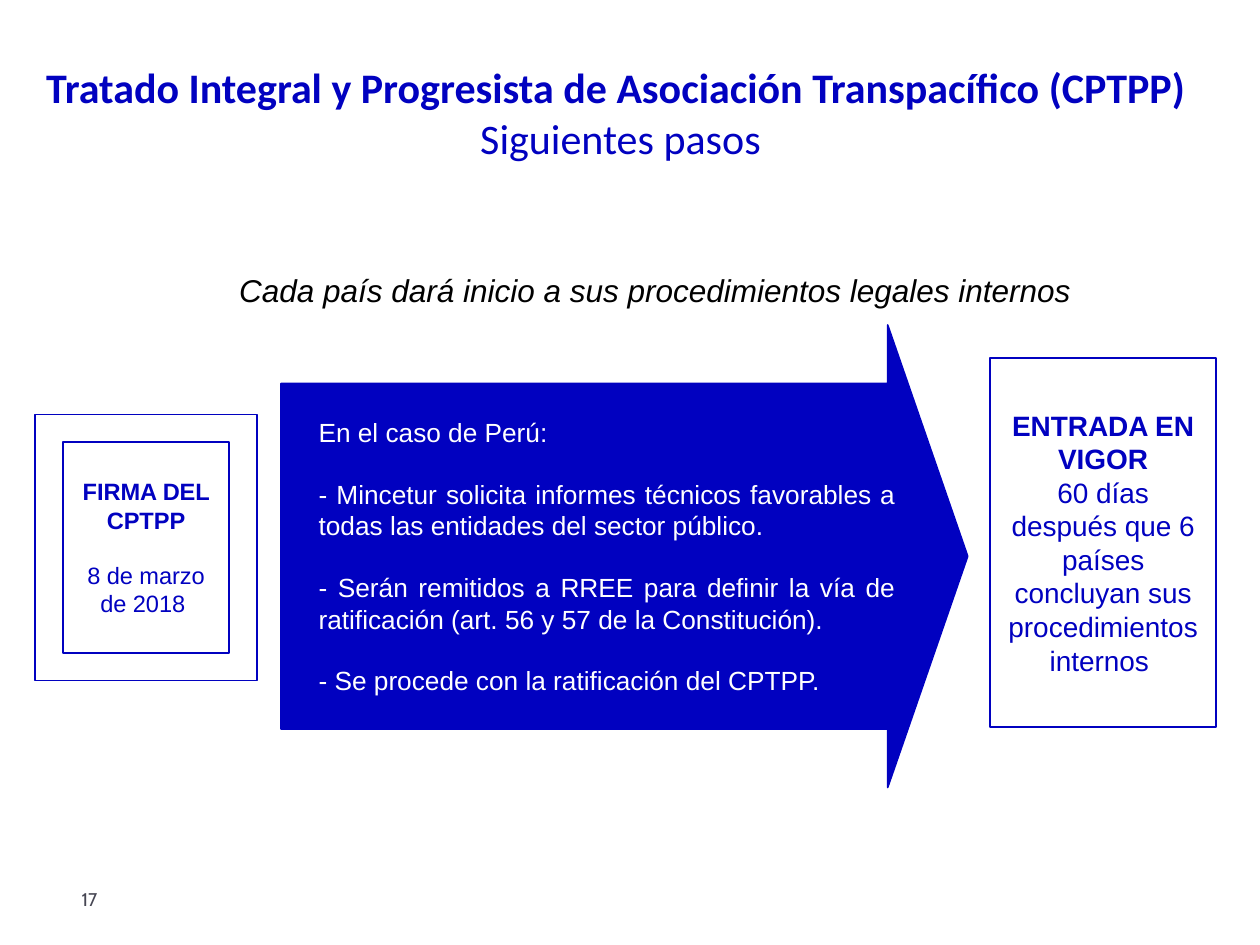
from pptx import Presentation
from pptx.dml.color import RGBColor
from pptx.enum import shapes, text
from pptx.util import Inches, Pt

THEME = {
    "blue": RGBColor(0x01, 0x01, 0xC0),
    "white": RGBColor(0xFF, 0xFF, 0xFF),
    "black": RGBColor(0, 0, 0),
    "gray": RGBColor(0x46, 0x46, 0x53),
    "body": "Arial",
    "heading": "Calibri",
    "number": "Cabin",
    "title_size": 24,
    "caption_size": 18,
    "result_size": 16,
    "steps_size": 15,
    "signing_size": 13.5,
    "number_size": 10.5,
    "line_width": 1,
    "line_height": 1.15,
}

BOLD, PLAIN, ITALIC = {"bold": True}, {"bold": False}, {"italic": True}
CENTER, JUSTIFY, LEFT = text.PP_ALIGN.CENTER, text.PP_ALIGN.JUSTIFY, text.PP_ALIGN.LEFT
KIND = shapes.MSO_SHAPE

BLOCKS = [
    {
        "box": (0.55, 7, 2.17, 0.3),
        "style": ("number", "number_size", "gray"),
        "lines": [("17", PLAIN)],
    },
    {
        "box": (2.23, 2.58, 5.45, 3.67),
        "kind": KIND.RIGHT_ARROW,
        "adjustments": (0.747, 0.173),
        "fill": "blue",
        "style": ("body", "steps_size", "white"),
        "align": JUSTIFY,
        "indent": 0.2,
        "spaced": True,
        "lines": [
            ("En el caso de Perú:", PLAIN),
            ("- Mincetur solicita informes técnicos favorables a todas las entidades del sector público.", PLAIN),
            ("- Serán remitidos a RREE para definir la vía de ratificación (art. 56 y 57 de la Constitución). ", PLAIN),
            ("- Se procede con la ratificación del CPTPP.", PLAIN),
        ],
    },
    {
        "box": (0.28, 3.29, 1.76, 2.11),
        "kind": KIND.FRAME,
        "style": ("body", "signing_size", "blue"),
        "align": CENTER,
        "spaced": True,
        "lines": [("FIRMA DEL CPTPP", BOLD), ("8 de marzo de 2018 ", PLAIN)],
    },
    {
        "box": (7.86, 2.84, 1.79, 2.93),
        "kind": KIND.RECTANGLE,
        "fill": "white",
        "style": ("body", "result_size", "blue"),
        "align": CENTER,
        "lines": [
            ("ENTRADA EN VIGOR", BOLD),
            ("60 días después que 6 países concluyan sus procedimientos internos ", PLAIN),
        ],
    },
    {
        "box": (1.3, 2.1, 7.37, 0.4),
        "style": ("body", "caption_size", "black"),
        "indent": 0.5,
        "wrap": False,
        "lines": [("Cada país dará inicio a sus procedimientos legales internos", ITALIC)],
    },
    {
        "box": (0.2, 0.44, 9.45, 1.31),
        "style": ("heading", "title_size", "blue"),
        "align": CENTER,
        "lines": [
            ("Tratado Integral y Progresista de Asociación Transpacífico (CPTPP) ", BOLD),
            ("Siguientes pasos", PLAIN),
        ],
    },
]


def add_outline_shape(slide, block, box):
    shape = slide.shapes.add_shape(block["kind"], *box)
    shape.shadow.inherit = False
    for index, value in enumerate(block.get("adjustments", ())):
        shape.adjustments[index] = value
    if "fill" in block:
        shape.fill.solid()
        shape.fill.fore_color.rgb = THEME[block["fill"]]
    else:
        shape.fill.background()
    shape.line.color.rgb = THEME["blue"]
    shape.line.width = Pt(THEME["line_width"])
    return shape


def write_lines(frame, block):
    font_name, size_name, color_name = block["style"]
    size = THEME[size_name]
    for index, (content, emphasis) in enumerate(block["lines"]):
        paragraph = frame.add_paragraph() if index else frame.paragraphs[0]
        paragraph.alignment = block.get("align", LEFT)
        if "indent" in block:
            properties = paragraph._p.get_or_add_pPr()
            properties.set("marL", str(Inches(block["indent"])))
            properties.set("indent", "0")
        if index and block.get("spaced"):
            paragraph.space_before = Pt(round(size * THEME["line_height"], 1))
        run = paragraph.add_run()
        run.text = content
        formats = {"name": THEME[font_name], "size": Pt(size), **emphasis}
        for name, value in formats.items():
            setattr(run.font, name, value)
        run.font.color.rgb = THEME[color_name]


def add_block(slide, block):
    box = [Inches(length) for length in block["box"]]
    if "kind" in block:
        shape = add_outline_shape(slide, block, box)
        anchor = text.MSO_ANCHOR.MIDDLE
    else:
        shape = slide.shapes.add_textbox(*box)
        anchor = text.MSO_ANCHOR.TOP
    frame = shape.text_frame
    formats = {"word_wrap": block.get("wrap", True), "vertical_anchor": anchor}
    for name, value in formats.items():
        setattr(frame, name, value)
    write_lines(frame, block)


def main():
    presentation = Presentation()
    presentation.slide_width = Inches(10)
    presentation.slide_height = Inches(7.5)
    slide = presentation.slides.add_slide(presentation.slide_layouts[6])
    for block in BLOCKS:
        add_block(slide, block)
    presentation.save("out.pptx")


if __name__ == "__main__":
    main()
